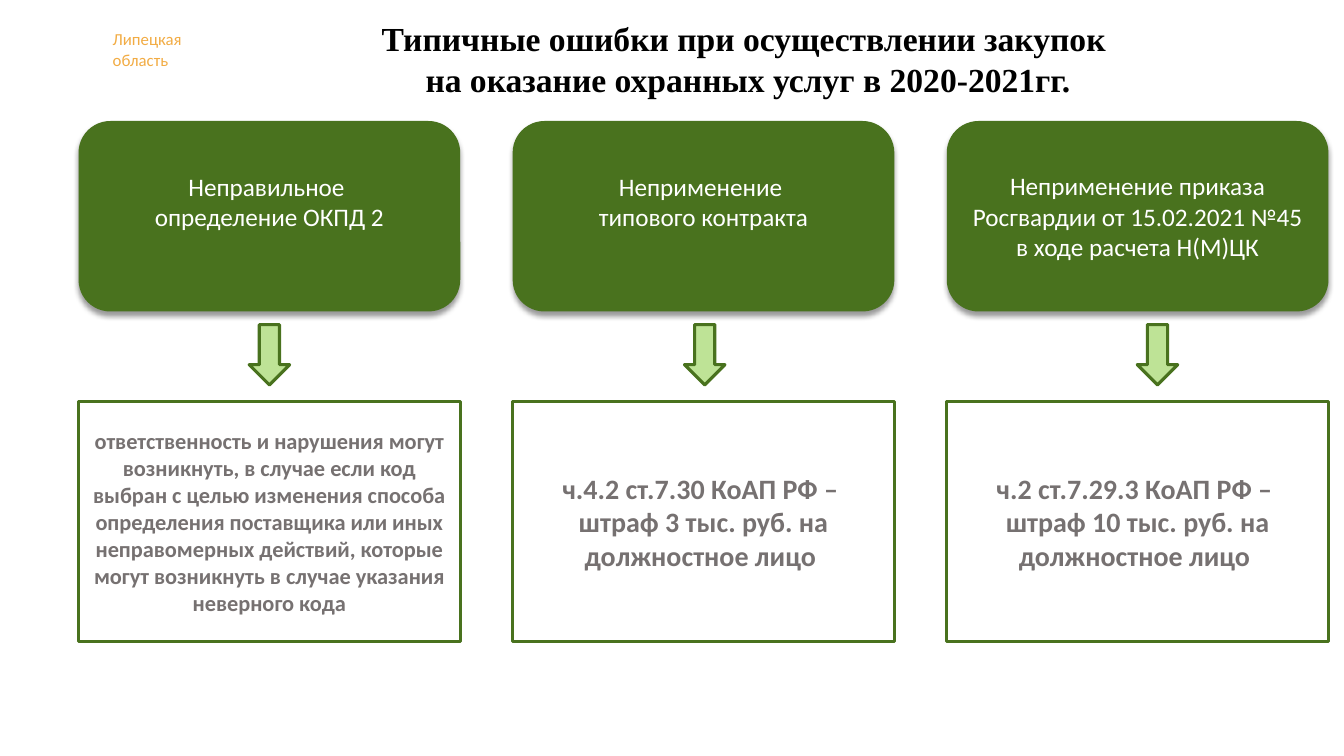
import lxml.etree
import pptx
import pptx.dml.color
import pptx.enum.shapes
import pptx.enum.text
import pptx.oxml.ns
import pptx.util

Cm = pptx.util.Cm
Pt = pptx.util.Pt
SHAPE = pptx.enum.shapes.MSO_SHAPE
ANCHOR = pptx.enum.text.MSO_ANCHOR
ALIGN = pptx.enum.text.PP_ALIGN

GREEN, LIGHT_GREEN, WHITE = "49721E", "BEE396", "FFFFFF"
GREY, ORANGE, BLACK = "767171", "F2AC44", "000000"

COLUMN_LEFT, COLUMN_TOP, COLUMN_WIDTH, COLUMN_PITCH = 1.98, 3.05, 9.62, 10.94
LINE_HEIGHT = 0.76
COLUMNS = [
    {"error": ["Неправильное ", "определение ОКПД 2"], "blank_lines": 1,
     "penalty": ["ответственность и нарушения могут возникнуть, в случае если код "
                 "выбран с целью изменения способа определения поставщика или иных "
                 "неправомерных действий, которые могут возникнуть в случае указания "
                 "неверного кода"],
     "penalty_size": 16, "arrow_shift": 0},
    {"error": ["Неприменение ", "типового контракта"], "blank_lines": 1,
     "penalty": ["ч.4.2 ст.7.30 КоАП РФ – ", "штраф 3 тыс. руб. на должностное лицо "],
     "penalty_size": 20, "arrow_shift": 0.03},
    {"error": ["Неприменение приказа Росгвардии от 15.02.2021 №45",
               "в ходе расчета Н(М)ЦК"], "blank_lines": 0,
     "penalty": ["ч.2 ст.7.29.3 КоАП РФ – ", "штраф 10 тыс. руб. на должностное лицо "],
     "penalty_size": 20, "arrow_shift": 0.5},
]


def color(value):
    """Turn a hex string into a colour."""
    return pptx.dml.color.RGBColor.from_string(value)


def write(shape, lines, size, text_color, font="Calibri", bold=False,
          align=ALIGN.CENTER, anchor=ANCHOR.MIDDLE):
    """Write one paragraph per line into a shape."""
    frame = shape.text_frame
    frame.word_wrap = True
    frame.auto_size = pptx.enum.text.MSO_AUTO_SIZE.NONE
    frame.vertical_anchor = anchor
    for index, line in enumerate(lines):
        paragraph = frame.add_paragraph() if index else frame.paragraphs[0]
        paragraph.alignment = align
        run = paragraph.add_run()
        run.text = line
        run.font.name = font
        run.font.size = Pt(size)
        run.font.bold = bold
        run.font.color.rgb = color(text_color)


def add_block(slide, kind, box, fill, line=None):
    """Add a filled shape with an optional outline."""
    shape = slide.shapes.add_shape(kind, *map(Cm, box))
    shape.fill.solid()
    shape.fill.fore_color.rgb = color(fill)
    if line:
        shape.line.color.rgb = color(line)
        shape.line.width = Pt(2.25)
    else:
        shape.line.fill.background()
    shape.shadow.inherit = False
    return shape


def add_shadow(shape):
    """Give a shape a soft shadow falling straight down."""
    qn = pptx.oxml.ns.qn
    effects = shape.element.spPr.find(qn("a:effectLst"))
    shadow = lxml.etree.SubElement(
        effects, qn("a:outerShdw"), blurRad=str(Pt(4)), dist=str(Pt(3)),
        dir="5400000", rotWithShape="0")
    shadow_color = lxml.etree.SubElement(shadow, qn("a:srgbClr"), val=BLACK)
    lxml.etree.SubElement(shadow_color, qn("a:alpha"), val="40000")


def add_header(slide, left, top, width, height):
    """Place the region label and the title in the header band."""
    label = slide.shapes.add_textbox(Cm(left), Cm(top + 0.28), Cm(2.6), Cm(1.27))
    write(label, ["Липецкая", "область"], 12, ORANGE,
          align=ALIGN.LEFT, anchor=ANCHOR.TOP)
    title = slide.shapes.title
    title.left, title.top = Cm(left + 2.19), Cm(top)
    title.width, title.height = Cm(width - 2.19), Cm(height)
    write(title, ["Типичные ошибки при осуществлении закупок ",
                  "на оказание охранных услуг в 2020-2021гг."],
          24, BLACK, "Times New Roman", True, anchor=ANCHOR.TOP)


def add_column(slide, column, left, top, width):
    """Place an error, an arrow and its penalty below one another."""
    error = add_block(slide, SHAPE.ROUNDED_RECTANGLE, (left, top, width, 4.8), GREEN)
    add_shadow(error)
    write(error, column["error"], 18, WHITE)
    error.text_frame.margin_bottom = Cm(0.13 + LINE_HEIGHT * column["blank_lines"])

    arrow_left = left + (width - 1.02) / 2 + column["arrow_shift"]
    add_block(slide, SHAPE.DOWN_ARROW, (arrow_left, top + 5.13, 1.02, 1.52),
              LIGHT_GREEN, GREEN)

    penalty = add_block(slide, SHAPE.RECTANGLE, (left, top + 7.07, width, 6.05),
                        WHITE, GREEN)
    write(penalty, column["penalty"], column["penalty_size"], GREY, bold=True)


def main():
    """Build and save the presentation."""
    presentation = pptx.Presentation()
    presentation.slide_width, presentation.slide_height = Cm(33.87), Cm(19.05)
    slide = presentation.slides.add_slide(presentation.slide_layouts[5])
    add_header(slide, 2.59, 0.33, 30.33, 2.31)
    for index, column in enumerate(COLUMNS):
        add_column(slide, column, COLUMN_LEFT + index * COLUMN_PITCH,
                   COLUMN_TOP, COLUMN_WIDTH)
    presentation.save("out.pptx")


if __name__ == "__main__":
    main()
